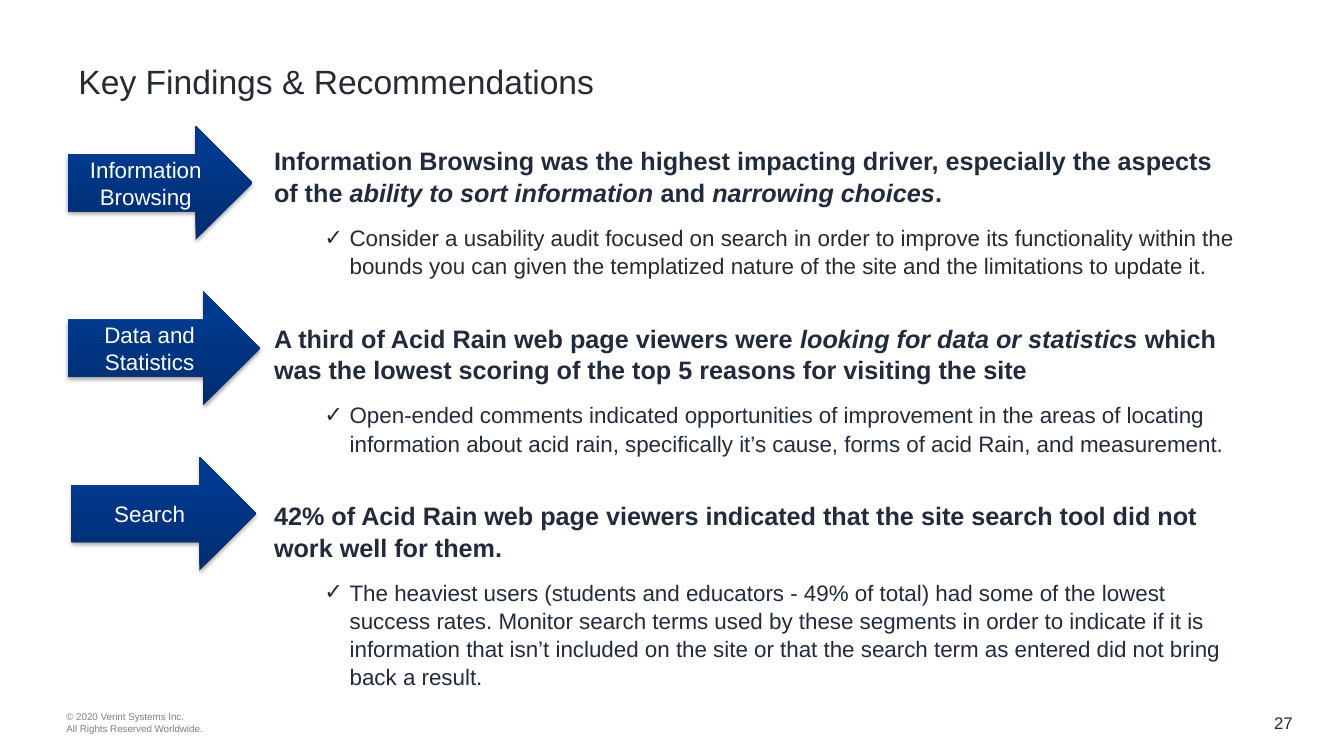
import dataclasses

import lxml.etree
import pptx
import pptx.dml.color
import pptx.enum.shapes
import pptx.enum.text
import pptx.oxml.ns
import pptx.util

ALIGN = pptx.enum.text.PP_ALIGN
MIDDLE = pptx.enum.text.MSO_ANCHOR.MIDDLE
TOP = pptx.enum.text.MSO_ANCHOR.TOP


@dataclasses.dataclass(frozen=True)
class Theme:
    font: str = "Arial"
    ink: str = "262A32"
    heading: str = "222B3C"
    muted: str = "808080"
    white: str = "FFFFFF"
    arrow_dark: str = "002C6E"
    arrow_light: str = "003A8F"
    shadow: str = "000000"
    title_size: int = 24
    heading_size: int = 18
    detail_size: int = 16
    number_size: int = 12
    legal_size: int = 7


@dataclasses.dataclass(frozen=True)
class Box:
    left: float
    top: float
    width: float
    height: float

    def share(self, left, top, width, height):
        return Box(
            self.left + self.width * left,
            self.top + self.height * top,
            self.width * width,
            self.height * height,
        )

    def percent(self, *shares):
        return self.share(*(value / 100 for value in shares))

    def emu(self):
        return [pptx.util.Inches(length) for length in dataclasses.astuple(self)]


THEME = Theme()
SLIDE = Box(0, 0, 13.33, 7.5)

ARROWS = [
    ("Information Browsing", 0, 0.96),
    ("Data and Statistics", 0, 1),
    ("Search", 0.02, 0.96),
]

FINDINGS = [
    (
        [
            ("Information Browsing was the highest impacting driver, especially the aspects of the ", False),
            ("ability to sort information ", True),
            ("and ", False),
            ("narrowing choices", True),
            (".", False),
        ],
        "Consider a usability audit focused on search in order to improve its functionality within the "
        "bounds you can given the templatized nature of the site and the limitations to update it.",
        THEME.ink,
    ),
    (
        [
            ("A third of Acid Rain web page viewers were ", False),
            ("looking for data or statistics ", True),
            ("which was the lowest scoring of the top 5 reasons for visiting the site", False),
        ],
        "Open-ended comments indicated opportunities of improvement in the areas of locating "
        "information about acid rain, specifically it’s cause, forms of acid Rain, and measurement.",
        THEME.heading,
    ),
    (
        [
            ("42% of Acid Rain web page viewers indicated that the site search tool did not work well for them.", False),
        ],
        "The heaviest users (students and educators - 49% of total) had some of the lowest success rates. "
        "Monitor search terms used by these segments in order to indicate if it is information that isn’t "
        "included on the site or that the search term as entered did not bring back a result.",
        THEME.heading,
    ),
]


def set_values(target, values):
    for name, value in values.items():
        setattr(target, name, value)


def add_run(paragraph, text, size, color, **style):
    run = paragraph.add_run()
    run.text = text
    set_values(run.font, {"name": THEME.font, "size": pptx.util.Pt(size), **style})
    run.font.color.rgb = pptx.dml.color.RGBColor.from_string(color)


def add_element(parent, tag, **attributes):
    return lxml.etree.SubElement(parent, pptx.oxml.ns.qn(tag), attributes)


def add_text_frame(slide, box, anchor):
    frame = slide.shapes.add_textbox(*box.emu()).text_frame
    set_values(frame, {"word_wrap": True, "vertical_anchor": anchor})
    return frame


def add_label(slide, box, lines, size, color, alignment=ALIGN.LEFT):
    frame = add_text_frame(slide, box, MIDDLE)
    for index, line in enumerate(lines):
        paragraph = frame.add_paragraph() if index else frame.paragraphs[0]
        paragraph.alignment = alignment
        add_run(paragraph, line, size, color)


def style_arrow(arrow):
    arrow.line.fill.background()
    arrow.fill.gradient()
    arrow.fill.gradient_angle = 90
    stops = ((0, THEME.arrow_dark), (0.8, THEME.arrow_light))
    for stop, (position, color) in zip(arrow.fill.gradient_stops, stops):
        stop.position = position
        stop.color.rgb = pptx.dml.color.RGBColor.from_string(color)
    arrow.shadow.inherit = False
    effects = arrow._element.spPr.find(pptx.oxml.ns.qn("a:effectLst"))
    shadow = add_element(
        effects, "a:outerShdw",
        blurRad=str(pptx.util.Pt(3.1)), dist=str(pptx.util.Pt(1.8)), dir="5400000", rotWithShape="0",
    )
    color = add_element(shadow, "a:srgbClr", val=THEME.shadow)
    add_element(color, "a:alpha", val="35000")


def add_arrows(slide, box):
    height = 0.256
    pitch = (1 - height) / (len(ARROWS) - 1)
    for row, (label, left, width) in enumerate(ARROWS):
        arrow = slide.shapes.add_shape(
            pptx.enum.shapes.MSO_SHAPE.RIGHT_ARROW,
            *box.share(left, row * pitch, width, height).emu(),
        )
        style_arrow(arrow)
        set_values(arrow.text_frame, {"word_wrap": True, "vertical_anchor": MIDDLE})
        paragraph = arrow.text_frame.paragraphs[0]
        paragraph.alignment = ALIGN.CENTER
        add_run(paragraph, label, THEME.detail_size, THEME.white)


def add_check_bullet(paragraph):
    properties = paragraph._p.get_or_add_pPr()
    properties.set("marL", str(pptx.util.Inches(0.75)))
    properties.set("indent", str(pptx.util.Inches(-0.25)))
    add_element(properties, "a:buFont", typeface=THEME.font)
    add_element(properties, "a:buChar", char="✓")


def add_findings(slide, box):
    frame = add_text_frame(slide, box, TOP)
    for index, (heading, detail, detail_color) in enumerate(FINDINGS):
        paragraph = frame.add_paragraph() if index else frame.paragraphs[0]
        set_values(paragraph, {
            "space_before": pptx.util.Pt(27 if index else 0),
            "space_after": pptx.util.Pt(6),
            "line_spacing": 1.05,
        })
        for text, italic in heading:
            add_run(paragraph, text, THEME.heading_size, THEME.heading, bold=True, italic=italic)
        paragraph = frame.add_paragraph()
        set_values(paragraph, {
            "level": 1,
            "space_before": pptx.util.Pt(5),
            "space_after": pptx.util.Pt(3),
            "line_spacing": 1.05,
        })
        add_check_bullet(paragraph)
        add_run(paragraph, detail, THEME.detail_size, detail_color)


def add_footer(slide, box):
    legal = ["© 2020 Verint Systems Inc.", "All Rights Reserved Worldwide."]
    add_label(slide, box.share(0, 0, 0.16, 1), legal, THEME.legal_size, THEME.muted)
    add_label(slide, box.share(0.91, 0, 0.09, 1), ["27"], THEME.number_size, THEME.ink, ALIGN.RIGHT)


def add_findings_slide(presentation, box):
    slide = presentation.slides.add_slide(presentation.slide_layouts[6])
    title = ["Key Findings & Recommendations"]
    add_label(slide, box.percent(5.1, 4.67, 91.52, 12), title, THEME.title_size, THEME.ink)
    add_findings(slide, box.percent(19.65, 18.4, 73.22, 73.33))
    add_arrows(slide, box.percent(5.03, 16.67, 14.33, 58.8))
    add_footer(slide, box.percent(4.2, 92.5, 92.72, 6.27))


def main():
    presentation = pptx.Presentation()
    set_values(presentation, {
        "slide_width": pptx.util.Inches(SLIDE.width),
        "slide_height": pptx.util.Inches(SLIDE.height),
    })
    add_findings_slide(presentation, SLIDE)
    presentation.save("out.pptx")


if __name__ == "__main__":
    main()
